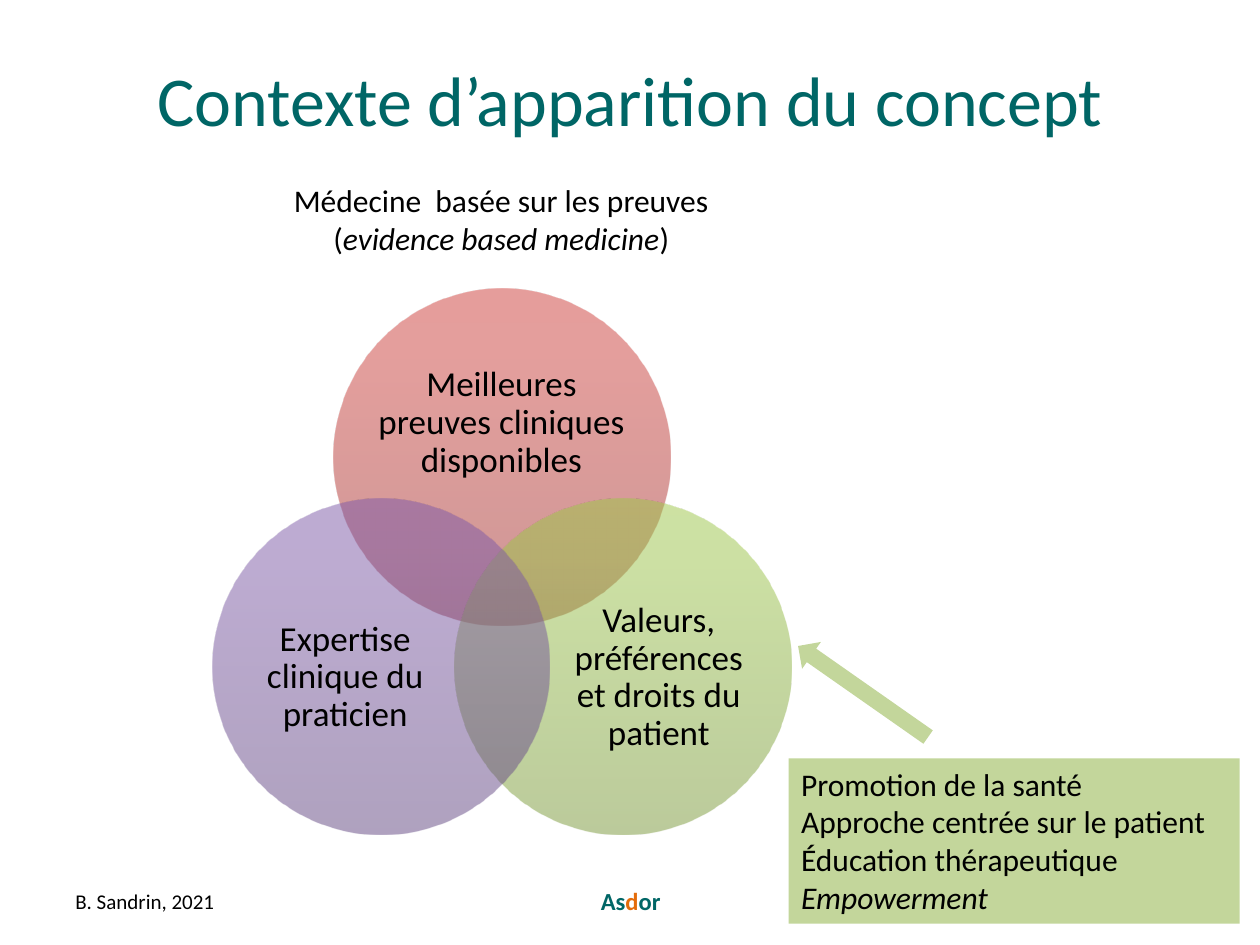
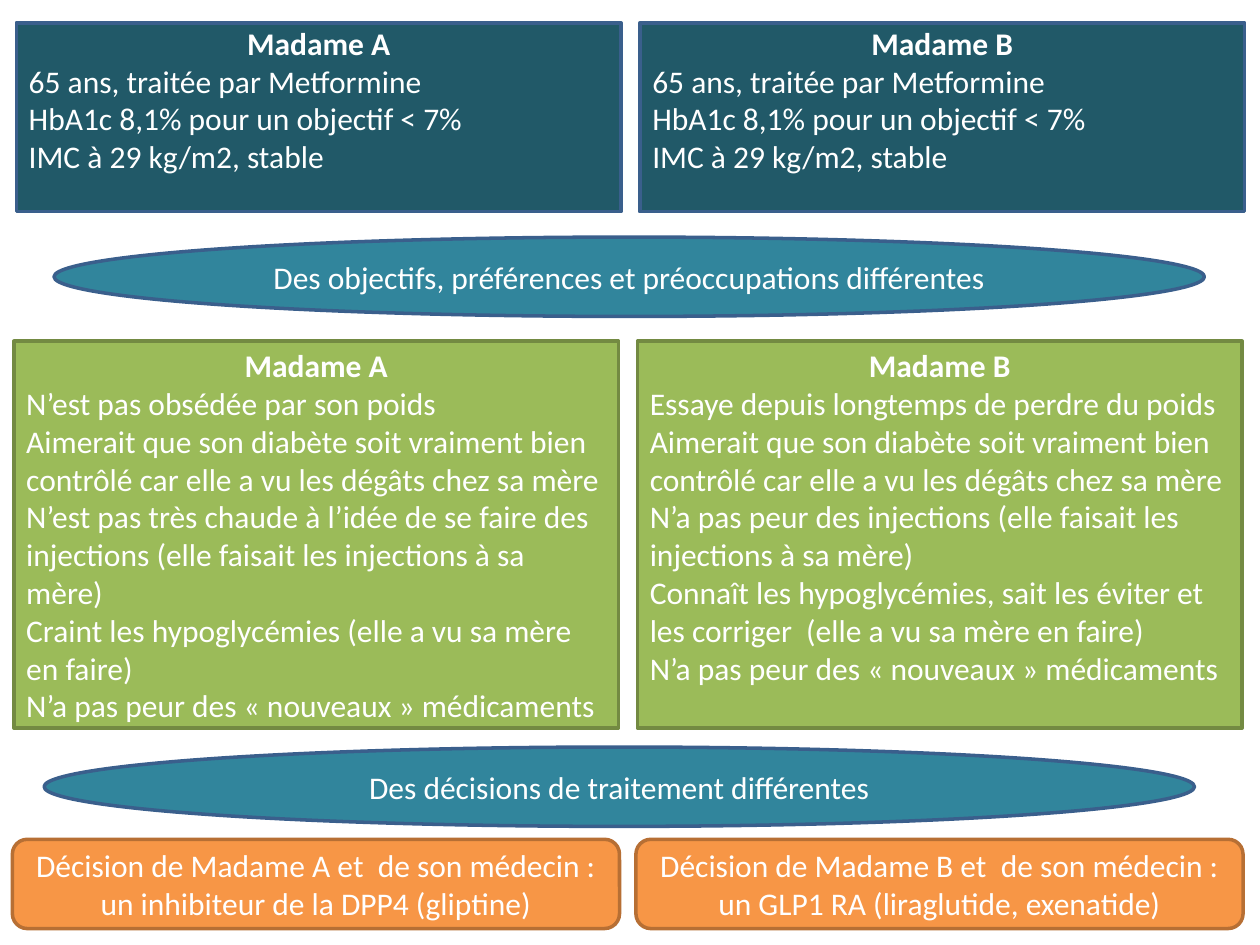
import math

from lxml import etree
from pptx import Presentation
from pptx.dml.color import RGBColor
from pptx.enum import shapes, text
from pptx.oxml.ns import qn
from pptx.util import Cm, Pt

C = {
    "black": "000000", "white": "FFFFFF", "title": "006666", "accent": "E46C0A",
    "pale_green": "C3D69B", "green": "9BBB59", "green_line": "738A42",
    "navy": "215968", "teal": "31859C", "blue_line": "3A5F8C",
    "orange": "F79646", "orange_line": "B76F34",
}
# Gradient stops at 0, 80 and 100 percent
VENN = {
    "red": ("9C2F2D", "CB3E3A", "CE3B37"),
    "green": ("779737", "9BC348", "9DC746"),
    "purple": ("5F4480", "7B58A6", "7C57A8"),
}
FONT = "Calibri"
SH = shapes.MSO_SHAPE
TOP, MIDDLE = text.MSO_ANCHOR.TOP, text.MSO_ANCHOR.MIDDLE
LEFT, CENTER = text.PP_ALIGN.LEFT, text.PP_ALIGN.CENTER


def rgb(name):
    return RGBColor.from_string(C[name])


def write(sp, paras, size=18, color="black", align=LEFT, anchor=MIDDLE, wrap=True):
    """Each paragraph is a string or a list of (text, format) runs."""
    tf = sp.text_frame
    tf.word_wrap = wrap
    tf.vertical_anchor = anchor
    for i, runs in enumerate(paras):
        p = tf.paragraphs[0] if i == 0 else tf.add_paragraph()
        p.alignment = align
        for words, fmt in [(runs, {})] if isinstance(runs, str) else runs:
            r = p.add_run()
            r.text = words
            r.font.name, r.font.size = FONT, Pt(size)
            r.font.color.rgb = rgb(fmt.get("color", color))
            r.font.bold = fmt.get("bold", False)
            r.font.italic = fmt.get("italic", False)
    return tf


def add_text(s, box, paras, **style):
    return write(s.shapes.add_textbox(*map(Cm, box)), paras, **style)


def add_shape(s, kind, box, fill=None, line=None):
    sp = s.shapes.add_shape(kind, *map(Cm, box))
    sp.shadow.inherit = False
    if fill:
        sp.fill.solid()
        sp.fill.fore_color.rgb = rgb(fill)
    if line:
        sp.line.color.rgb = rgb(line)
        sp.line.width = Pt(2)
    else:
        sp.line.fill.background()
    return sp


def glassy_fill(sp, colors):
    """Half-transparent vertical gradient, darkest at the bottom."""
    sp.fill.gradient()
    grad = sp.fill._xPr.find(qn("a:gradFill"))
    stops = grad.find(qn("a:gsLst"))
    for old in list(stops):
        stops.remove(old)
    for pos, color in zip((0, 80, 100), colors):
        gs = etree.SubElement(stops, qn("a:gs"), pos=str(pos * 1000))
        clr = etree.SubElement(gs, qn("a:srgbClr"), val=color)
        etree.SubElement(clr, qn("a:alpha"), val="50000")
    grad.find(qn("a:lin")).set("ang", str(270 * 60000))


# Title and footer
def title(s, words):
    add_text(s, (1.27, 0.76, 22.86, 2.46), [words], size=40, color="title", align=CENTER)


def footer(s, y=17.65, h=1.02):
    add_text(s, (1.27, y, 5.92, h), ["B. Sandrin, 2021"], size=12)
    green, orange = ({"bold": True, "color": c} for c in ("title", "accent"))
    add_text(s, (8.69, y, 8.05, h), [[("As", green), ("d", orange), ("or", green)]],
             size=14, align=CENTER)


# Three overlapping circles on an equilateral triangle
def venn(s, x, y, diameter=6.78, step=4.88):
    low = step * math.sqrt(3) / 2
    circles = [
        ("red", step / 2, 0, (0.89, 1.19, 4.98, 3.05),
         "Meilleures preuves cliniques disponibles"),
        ("green", step, low, (2.08, 1.75, 4.06, 3.73),
         "Valeurs, préférences et droits du patient"),
        ("purple", 0, low, (0.64, 1.75, 4.06, 3.73),
         "Expertise clinique du praticien"),
    ]
    for color, dx, dy, (lx, ly, lw, lh), label in circles:
        cx, cy = x + dx, y + dy
        glassy_fill(add_shape(s, SH.OVAL, (cx, cy, diameter, diameter)), VENN[color])
        tf = add_text(s, (cx + lx, cy + ly, lw, lh), [label], size=20, align=CENTER)
        tf.margin_left = tf.margin_right = tf.margin_top = tf.margin_bottom = 0
        tf.paragraphs[0].line_spacing = 0.9


# Green note and the arrow leading from it to the patient circle
def patient_note(s, x, y):
    note = add_shape(s, SH.RECTANGLE, (x, y, 9.09, 3.33), "pale_green")
    write(note, ["Promotion de la santé", "Approche centrée sur le patient",
                 "Éducation thérapeutique", [("Empowerment", {"italic": True})]], anchor=TOP)
    arrow = add_shape(s, SH.UP_ARROW, (x + 1.17, y - 2.95, 0.66, 3.2), "pale_green")
    arrow.rotation = 305


def context_slide(s):
    title(s, "Contexte d’apparition du concept")
    footer(s)
    venn(s, 4.29, 5.82)
    patient_note(s, 15.9, 15.29)
    add_text(s, (5.61, 3.53, 8.99, 1.8),
             ["Médecine  basée sur les preuves",
              [("(", {}), ("evidence based medicine", {"italic": True}), (")", {})]],
             align=CENTER, anchor=TOP, wrap=False)


# Rows of the comparison: two columns, or one band across
PITCH = 12.57


def patient_cards(s, box, fill, line, facts, inset):
    x, y, w, h = box
    for i, (name, lines) in enumerate(zip("AB", facts)):
        card = add_shape(s, SH.RECTANGLE, (x + i * PITCH, y, w, h), fill, line)
        heading = [(f"Madame {name}", {"bold": True})]
        tf = write(card, [heading, *lines], color="white", anchor=TOP)
        tf.margin_top = Cm(inset)
        tf.paragraphs[0].alignment = CENTER


def decisions(s, box, treatments):
    x, y, w, h = box
    for i, (name, drug) in enumerate(zip("AB", treatments)):
        sp = add_shape(s, SH.ROUNDED_RECTANGLE, (x + i * PITCH, y, w, h),
                       "orange", "orange_line")
        write(sp, [f"Décision de Madame {name} et  de son médecin : {drug}"],
              color="white", align=CENTER)


def band(s, x, y, words):
    sp = add_shape(s, SH.OVAL, (x, y, 23.19, 1.6), "teal", "blue_line")
    write(sp, [words], color="white", align=CENTER)


def comparison_slide(s):
    profile = ["65 ans, traitée par Metformine", "HbA1c 8,1% pour un objectif < 7%",
               "IMC à 29 kg/m2, stable"]
    control = ("Aimerait que son diabète soit vraiment bien contrôlé "
               "car elle a vu les dégâts chez sa mère")
    new_drugs = "N’a pas peur des « nouveaux » médicaments"
    wishes_a = [
        "N’est pas obsédée par son poids", control,
        "N’est pas très chaude à l’idée de se faire des injections "
        "(elle faisait les injections à sa mère)",
        "Craint les hypoglycémies (elle a vu sa mère en faire)", new_drugs]
    wishes_b = [
        "Essaye depuis longtemps de perdre du poids", control,
        "N’a pas peur des injections (elle faisait les injections à sa mère)",
        "Connaît les hypoglycémies, sait les éviter et les corriger  "
        "(elle a vu sa mère en faire)", new_drugs]

    patient_cards(s, (0.33, 0.46, 12.19, 3.81), "navy", "blue_line",
                  (profile, profile), inset=0.02)
    band(s, 1.09, 4.78, "Des objectifs, préférences et préoccupations différentes")
    patient_cards(s, (0.28, 6.88, 12.19, 7.8), "green", "green_line",
                  (wishes_a, wishes_b), inset=0.1)
    band(s, 0.89, 15.06, "Des décisions de traitement différentes")
    decisions(s, (0.25, 16.92, 12.24, 1.8),
              ("un inhibiteur de la DPP4 (gliptine)",
               "un GLP1 RA (liraglutide, exenatide)"))


def main():
    prs = Presentation()
    prs.slide_width, prs.slide_height = Cm(25.4), Cm(19.05)
    for build in (context_slide, comparison_slide):
        build(prs.slides.add_slide(prs.slide_layouts[6]))
    prs.save("out.pptx")


if __name__ == "__main__":
    main()
